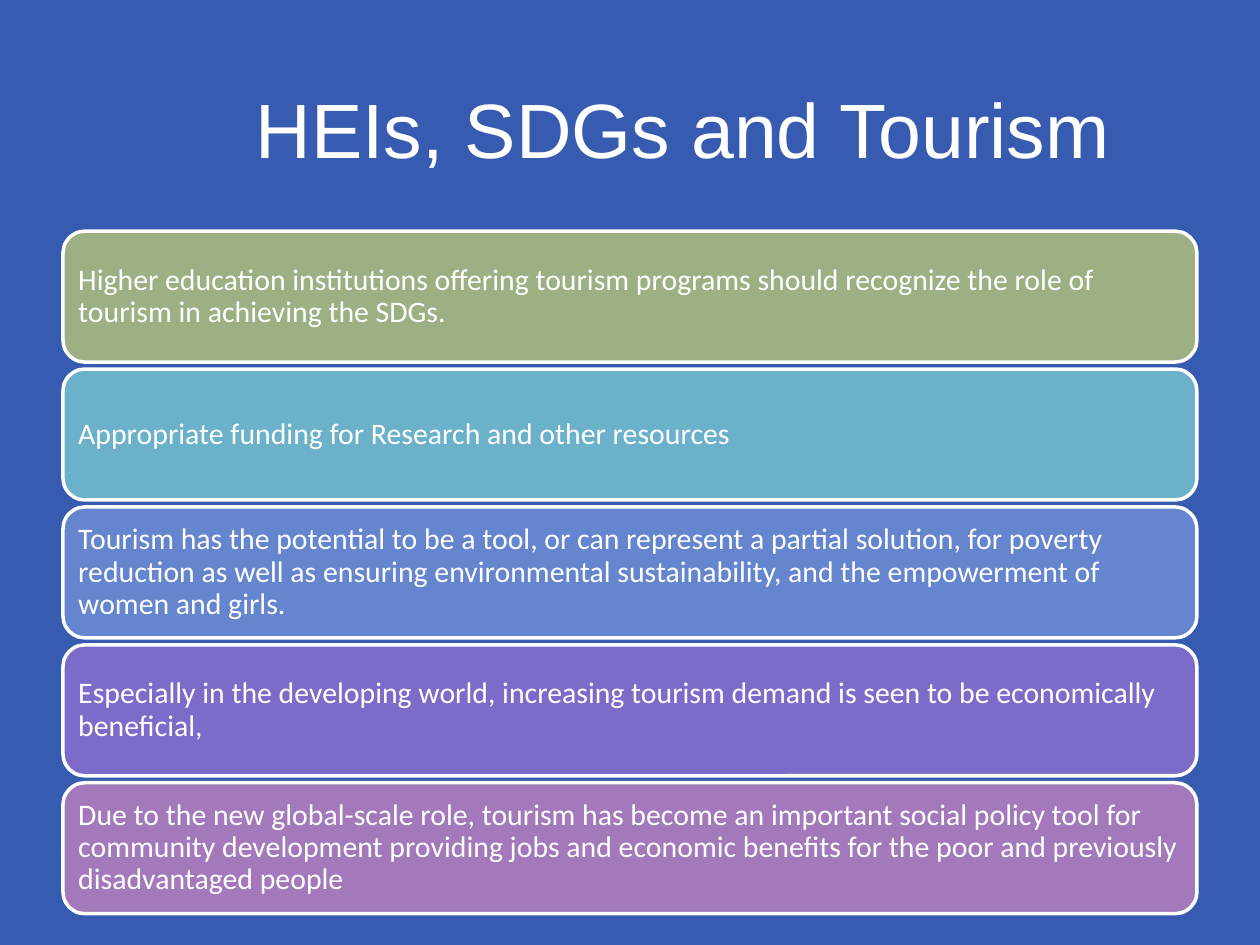
from dataclasses import dataclass

from pptx import Presentation
from pptx.dml.color import RGBColor
from pptx.enum.shapes import MSO_SHAPE
from pptx.enum.text import MSO_ANCHOR, PP_ALIGN
from pptx.util import Cm, Pt

ROUNDED = MSO_SHAPE.ROUNDED_RECTANGLE
MIDDLE = MSO_ANCHOR.MIDDLE
LEFT, CENTER = PP_ALIGN.LEFT, PP_ALIGN.CENTER


@dataclass(frozen=True)
class Theme:
    background: str = "375BB0"
    light: str = "FFFFFF"
    bars: tuple = ("9CB084", "6BB1C9", "6585CF", "7E6BC9", "A379BB")
    title_font: str = "Arial"
    body_font: str = "Calibri"
    title_size: int = 44
    body_size: int = 17
    outline: int = 2


THEME = Theme()

TITLE = "HEIs, SDGs and Tourism"
POINTS = [
    "Higher education institutions offering tourism programs should recognize "
    "the role of tourism in achieving the SDGs.",
    "Appropriate funding for Research and other resources",
    "Tourism has the potential to be a tool, or can represent a partial solution, "
    "for poverty reduction as well as ensuring environmental sustainability, "
    "and the empowerment of women and girls.",
    "Especially in the developing world, increasing tourism demand is seen to be "
    "economically beneficial,",
    "Due to the new global-scale role, tourism has become an important social "
    "policy tool for community development providing jobs and economic benefits "
    "for the poor and previously disadvantaged people",
]


def color(value):
    return RGBColor.from_string(value)


def write(shape, text, font, size, align):
    tf = shape.text_frame
    tf.word_wrap = True
    tf.vertical_anchor = MIDDLE
    p = tf.paragraphs[0]
    p.text = text
    p.alignment = align
    p.font.name = font
    p.font.size = Pt(size)
    p.font.color.rgb = color(THEME.light)
    return tf


def add_title(s, left, top, width, height):
    box = s.shapes.add_textbox(Cm(left), Cm(top), Cm(width), Cm(height))
    write(box, TITLE, THEME.title_font, THEME.title_size, CENTER)


def add_bars(s, left, top, width, height, gap=0.14, inset=0.18):
    bar_height = (height - gap * (len(POINTS) - 1)) / len(POINTS)
    for i, (text, fill) in enumerate(zip(POINTS, THEME.bars)):
        bar_top = top + i * (bar_height + gap)
        bar = s.shapes.add_shape(
            ROUNDED, Cm(left), Cm(bar_top), Cm(width), Cm(bar_height))
        bar.shadow.inherit = False
        bar.fill.solid()
        bar.fill.fore_color.rgb = color(fill)
        bar.line.color.rgb = color(THEME.light)
        bar.line.width = Pt(THEME.outline)
        tf = write(bar, text, THEME.body_font, THEME.body_size, LEFT)
        tf.margin_left = tf.margin_right = Cm(inset)
        tf.margin_top = tf.margin_bottom = Cm(inset)
        tf.paragraphs[0].line_spacing = 0.9


def main():
    prs = Presentation()
    prs.slide_width, prs.slide_height = Cm(25.4), Cm(19.05)
    s = prs.slides.add_slide(prs.slide_layouts[6])
    s.background.fill.solid()
    s.background.fill.fore_color.rgb = color(THEME.background)
    add_bars(s, 1.27, 4.66, 22.86, 13.76)
    add_title(s, 2.34, 0.99, 22.86, 3.18)
    prs.save("out.pptx")


if __name__ == "__main__":
    main()
